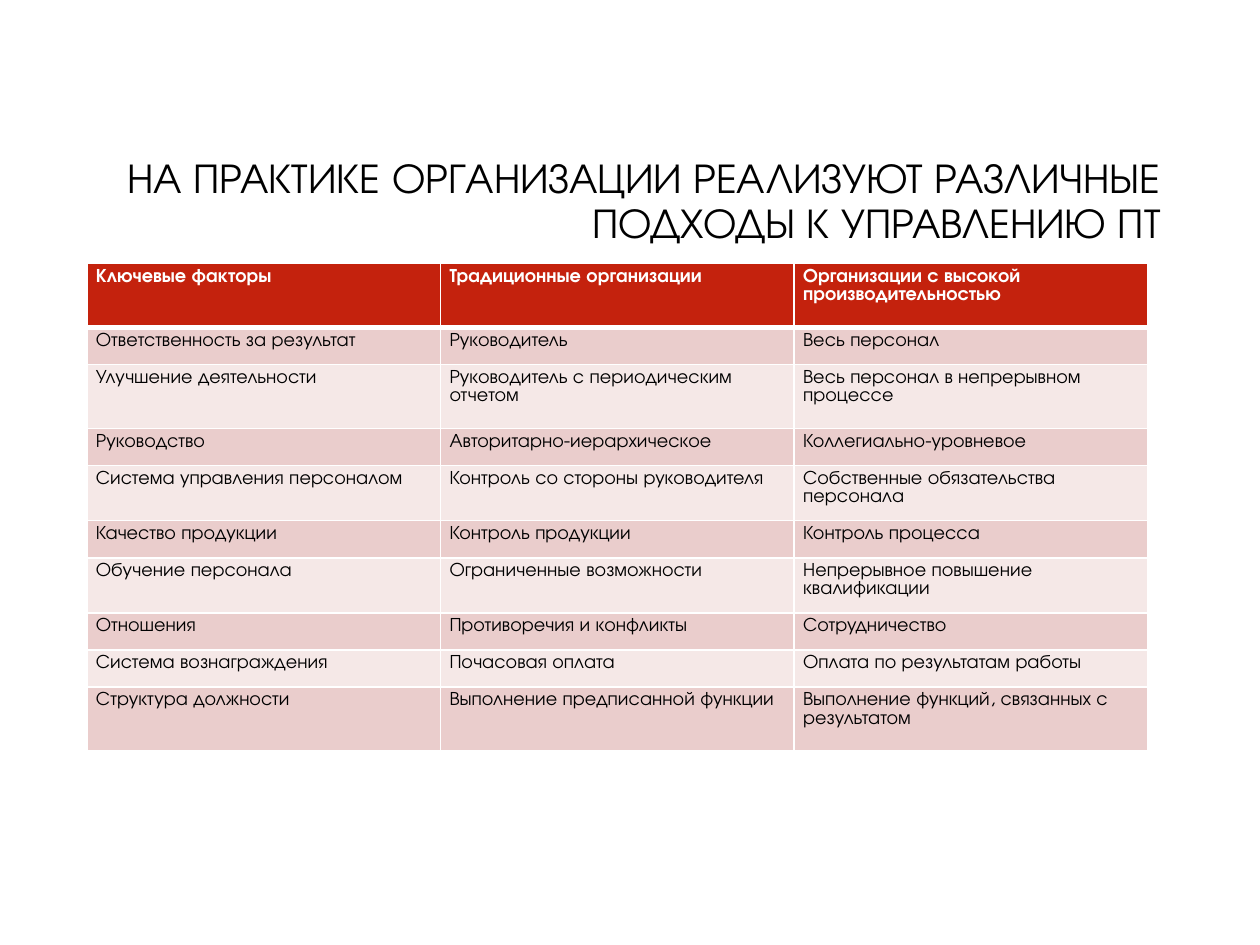
from dataclasses import dataclass

from lxml import etree
from pptx import Presentation
from pptx import util as u
from pptx.dml.color import RGBColor
from pptx.enum import text
from pptx.oxml import ns


@dataclass(frozen=True)
class Theme:
    face: str = "TeX Gyre Adventor"
    ink: str = "000000"
    white: str = "FFFFFF"
    head: str = "C4220D"
    odd: str = "EACDCC"
    even: str = "F5E8E7"
    title: float = 24
    body: float = 11


@dataclass(frozen=True)
class Row:
    high: float
    cells: tuple[str, str, str]


THEME = Theme()
TITLE = "НА ПРАКТИКЕ ОРГАНИЗАЦИИ РЕАЛИЗУЮТ РАЗЛИЧНЫЕ ПОДХОДЫ К УПРАВЛЕНИЮ ПТ"
ROWS = (
    Row(36.4, ("Ключевые факторы", "Традиционные организации",
               "Организации с высокой производительностью")),
    Row(21.2, ("Ответственность за результат", "Руководитель", "Весь персонал")),
    Row(36.6, ("Улучшение деятельности", "Руководитель с периодическим отчетом",
               "Весь персонал в непрерывном процессе")),
    Row(21.2, ("Руководство", "Авторитарно-иерархическое", "Коллегиально-уровневое")),
    Row(26.2, ("Система управления персоналом", "Контроль со стороны руководителя",
               "Собственные обязательства персонала")),
    Row(21.2, ("Качество продукции", "Контроль продукции", "Контроль процесса")),
    Row(26.2, ("Обучение персонала", "Ограниченные возможности",
               "Непрерывное повышение квалификации")),
    Row(21.2, ("Отношения", "Противоречия и конфликты", "Сотрудничество")),
    Row(21.2, ("Система вознаграждения", "Почасовая оплата",
               "Оплата по результатам работы")),
    Row(36.4, ("Структура должности", "Выполнение предписанной функции",
               "Выполнение функций, связанных с результатом")),
)


def style(para, size: float, color: str, bold: bool, gap: float) -> None:
    para.line_spacing = gap
    font = para.font
    font.name = THEME.face
    font.size = u.Pt(size)
    font.bold = bold
    font.color.rgb = RGBColor.from_string(color)


def edge(cell, side: str, wide: float) -> None:
    line = etree.SubElement(cell._tc.get_or_add_tcPr(), ns.qn(f"a:ln{side}"),
                            w=str(u.Pt(wide)))
    fill = etree.SubElement(line, ns.qn("a:solidFill"))
    etree.SubElement(fill, ns.qn("a:srgbClr"), val=THEME.white)


def draw_cell(cell, words: str, row: int) -> None:
    head = row == 0
    for side in "LRTB":
        thick = (head and side == "B") or (row == 1 and side == "T")
        edge(cell, side, 3 if thick else 1)
    cell.fill.solid()
    shade = THEME.head if head else THEME.odd if row % 2 else THEME.even
    cell.fill.fore_color.rgb = RGBColor.from_string(shade)
    cell.margin_left = cell.margin_right = u.Pt(5.2)
    cell.margin_top = cell.margin_bottom = u.Pt(2.6)
    cell.text = words
    style(cell.text_frame.paragraphs[0], THEME.body,
          THEME.white if head else THEME.ink, head, 1.0)


def draw_title(slide) -> None:
    box = slide.shapes.add_textbox(u.Pt(49.7), u.Pt(89.3), u.Pt(620.6), u.Pt(52.6))
    frame = box.text_frame
    frame.word_wrap = True
    frame.vertical_anchor = text.MSO_ANCHOR.MIDDLE
    frame.text = TITLE
    para = frame.paragraphs[0]
    para.alignment = text.PP_ALIGN.RIGHT
    style(para, THEME.title, THEME.ink, False, 0.9)


def draw_table(slide, rows: tuple[Row, ...]) -> None:
    high = sum(row.high for row in rows)
    table = slide.shapes.add_table(len(rows), 3, u.Pt(49.6), u.Pt(150.6),
                                   u.Pt(606.3), u.Pt(high)).table
    for col in table.columns:
        col.width = u.Pt(202.1)
    for i, row in enumerate(rows):
        table.rows[i].height = u.Pt(row.high)
        for j, words in enumerate(row.cells):
            draw_cell(table.cell(i, j), words, i)


def main() -> None:
    deck = Presentation()
    deck.slide_width, deck.slide_height = u.Pt(720), u.Pt(540)
    slide = deck.slides.add_slide(deck.slide_layouts[6])
    draw_title(slide)
    draw_table(slide, ROWS)
    deck.save("out.pptx")


if __name__ == "__main__":
    main()
